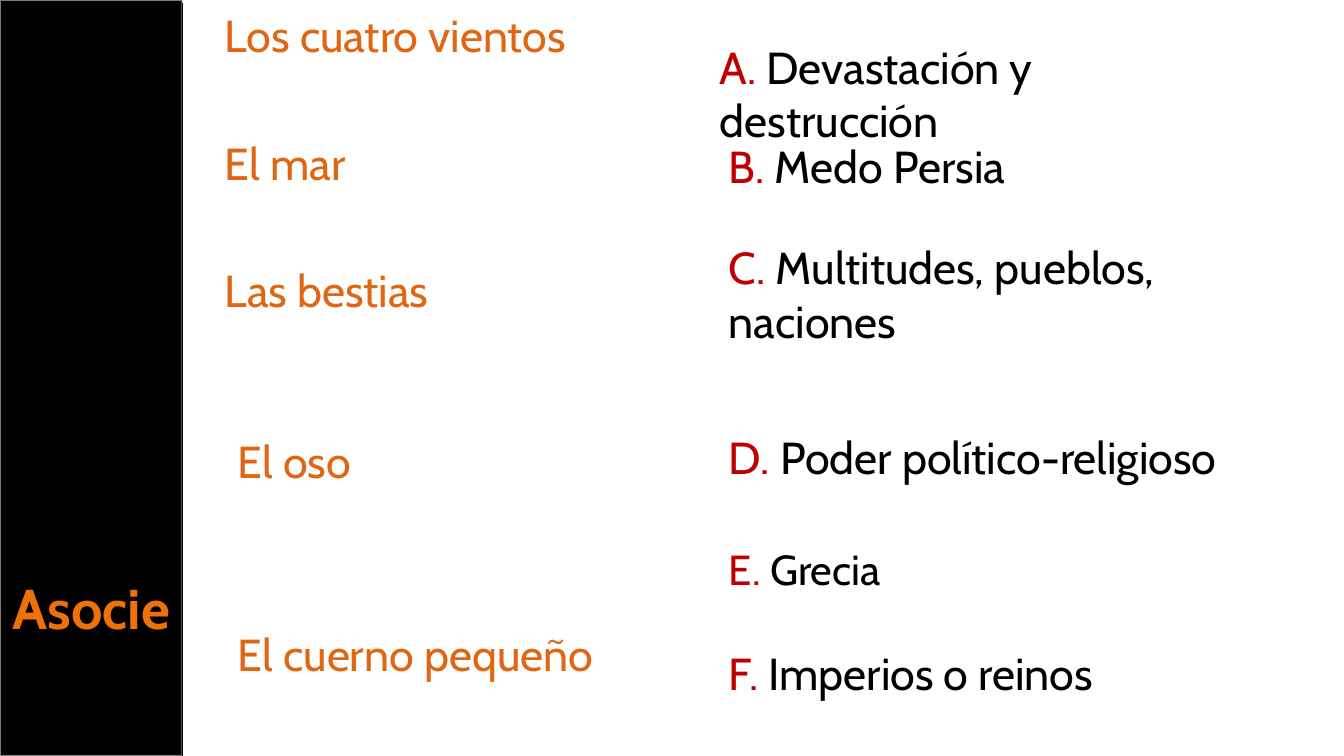
import pptx
import pptx.dml.color
import pptx.enum.shapes
import pptx.enum.text
import pptx.oxml
import pptx.oxml.ns
import pptx.util
from lxml import etree

WIDTH, HEIGHT = pptx.util.Inches(13.33), pptx.util.Inches(7.5)
FONT = "Cabin"
BLACK, TERM_ORANGE, TITLE_ORANGE, LETTER_RED = "000000", "DF6613", "EE7008", "C00000"
BAND_WIDTH = 13.58
TERMS_LEFT, TERMS_INDENTED, MEANINGS_LEFT = 15.98, 16.95, 53.49
ROW_HEIGHT = 8.53

TERMS = [
    ("Los cuatro vientos", TERMS_LEFT, 0.4, 34.43),
    ("El mar", TERMS_LEFT, 17.33, 28.81),
    ("Las bestias", TERMS_LEFT, 34.13, 30.98),
    ("El oso", TERMS_INDENTED, 56.67, 30.46),
    ("El cuerno pequeño", TERMS_INDENTED, 82.27, 31.96),
]
MEANINGS = [
    ("A. ", "Devastación y destrucción", 52.81, 4.53, 41.34, 32),
    ("B. ", "Medo Persia", MEANINGS_LEFT, 17.73, 35.86, 32),
    ("C. ", "Multitudes, pueblos, naciones", MEANINGS_LEFT, 31.07, 35.26, 32),
    ("D. ", "Poder político-religioso", MEANINGS_LEFT, 56.13, 39.46, 32),
    ("E. ", "Grecia", MEANINGS_LEFT, 71.2, 22.73, 30),
    ("F. ", "Imperios o reinos", MEANINGS_LEFT, 84.8, 41.94, 32),
]


def across(percent):
    """Return a share of the slide's width."""
    return round(WIDTH * percent / 100)


def down(percent):
    """Return a share of the slide's height."""
    return round(HEIGHT * percent / 100)


def color(hex_value):
    """Return the colour for a hex string."""
    return pptx.dml.color.RGBColor.from_string(hex_value)


def write(frame, runs, size, bold=False):
    """Write coloured runs into the first paragraph of a text frame."""
    frame.word_wrap = True
    frame.vertical_anchor = pptx.enum.text.MSO_ANCHOR.TOP
    for words, hex_value in runs:
        run = frame.paragraphs[0].add_run()
        run.text = words
        run.font.name = FONT
        run.font.size = pptx.util.Pt(size)
        run.font.bold = bold
        run.font.color.rgb = color(hex_value)


def add_entry(slide, runs, left, top, width, size=32):
    """Add one entry of the matching exercise."""
    entry = slide.shapes.add_textbox(across(left), down(top), across(width), down(ROW_HEIGHT))
    write(entry.text_frame, runs, size)
    entry.text_frame.auto_size = pptx.enum.text.MSO_AUTO_SIZE.SHAPE_TO_FIT_TEXT


def add_band(slide):
    """Add the black side band with its translucent outline."""
    band = slide.shapes.add_shape(
        pptx.enum.shapes.MSO_SHAPE.RECTANGLE, 0, 0, across(BAND_WIDTH), HEIGHT)
    band.shadow.inherit = False
    band.fill.solid()
    band.fill.fore_color.rgb = color(BLACK)
    band.line.color.rgb = color("F9F9F9")
    band.line.width = pptx.util.Pt(1.35)
    tint = band.line.fill.fore_color
    tint.rgb = color("F9F9F9")
    outline = band.element.spPr.find(pptx.oxml.ns.qn("a:ln"))
    shade = outline.find(".//" + pptx.oxml.ns.qn("a:srgbClr"))
    etree.SubElement(shade, pptx.oxml.ns.qn("a:alpha"), val="50000")


def add_edge(slide):
    """Add the thin line along the band's right edge."""
    edge = slide.shapes.add_connector(
        pptx.enum.shapes.MSO_CONNECTOR.STRAIGHT,
        across(BAND_WIDTH), down(0.4), across(BAND_WIDTH), HEIGHT)
    edge.line.color.rgb = color(BLACK)
    edge.line.width = pptx.util.Pt(0.85)
    etree.SubElement(edge.element.spPr, pptx.oxml.ns.qn("a:effectLst"))


def place_title(slide):
    """Place the slide title on top of the band."""
    title = slide.shapes.title
    title.left, title.top = 0, down(75.2)
    title.width, title.height = across(BAND_WIDTH), down(10.27)
    write(title.text_frame, [("Asocie", TITLE_ORANGE)], 40, bold=True)
    title.text_frame.auto_size = pptx.enum.text.MSO_AUTO_SIZE.SHAPE_TO_FIT_TEXT
    title.text_frame.paragraphs[0].alignment = pptx.enum.text.PP_ALIGN.CENTER
    title.element.getparent().append(title.element)


def main():
    """Build the matching exercise and save it."""
    deck = pptx.Presentation()
    deck.slide_width, deck.slide_height = WIDTH, HEIGHT
    slide = deck.slides.add_slide(deck.slide_layouts[5])
    add_band(slide)
    for term, left, top, width in TERMS:
        add_entry(slide, [(term, TERM_ORANGE)], left, top, width)
    for letter, meaning, left, top, width, size in MEANINGS:
        add_entry(slide, [(letter, LETTER_RED), (meaning, BLACK)], left, top, width, size)
    place_title(slide)
    add_edge(slide)
    deck.save("out.pptx")


if __name__ == "__main__":
    main()
